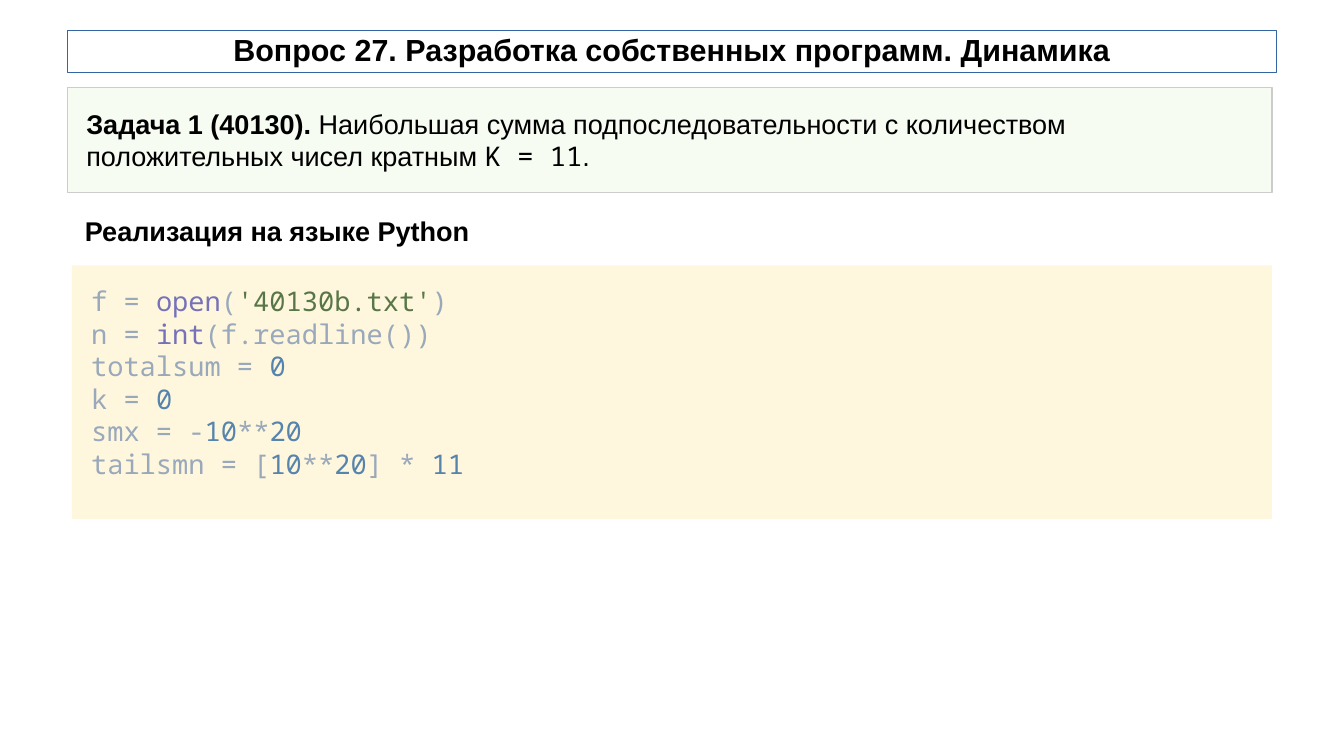
import pptx
import pptx.util
import pptx.dml.color
import pptx.enum.shapes
import pptx.enum.text

Cm = pptx.util.Cm
COLORS = {
    "black": "000000",
    "title_line": "3465A4",
    "task_fill": "F6FCF2",
    "task_line": "CCCCCC",
    "code_fill": "FEF7DD",
    "plain": "99A8BA",
    "builtin": "7572B9",
    "string": "587647",
    "number": "5684AD",
}
SANS, MONO = "Arial", "Noto Sans Mono"
CODE = [
    [("f = ", "plain"), ("open", "builtin"), ("(", "plain"),
     ("'40130b.txt'", "string"), (")", "plain")],
    [("n = ", "plain"), ("int", "builtin"), ("(f.readline())", "plain")],
    [("totalsum = ", "plain"), ("0", "number")],
    [("k = ", "plain"), ("0", "number")],
    [("smx = -", "plain"), ("10", "number"), ("**", "plain"), ("20", "number")],
    [("tailsmn = [", "plain"), ("10", "number"), ("**", "plain"),
     ("20", "number"), ("] * ", "plain"), ("11", "number")],
]


def rgb(name):
    """Return the named colour."""
    return pptx.dml.color.RGBColor.from_string(COLORS[name])


def set_frame(box, inset_x, inset_y, anchor=pptx.enum.text.MSO_ANCHOR.TOP):
    """Set wrapping, margins and anchor of a box and return its text frame."""
    frame = box.text_frame
    frame.word_wrap = True
    frame.margin_left = frame.margin_right = Cm(inset_x)
    frame.margin_top = frame.margin_bottom = Cm(inset_y)
    frame.vertical_anchor = anchor
    return frame


def add_panel(page, left, top, width, height, fill=None, line=None, weight=0):
    """Add a rectangle with an optional fill and outline."""
    panel = page.shapes.add_shape(
        pptx.enum.shapes.MSO_SHAPE.RECTANGLE,
        Cm(left), Cm(top), Cm(width), Cm(height))
    panel.shadow.inherit = False
    if fill:
        panel.fill.solid()
        panel.fill.fore_color.rgb = rgb(fill)
    else:
        panel.fill.background()
    if line:
        panel.line.color.rgb = rgb(line)
        panel.line.width = pptx.util.Pt(weight)
    else:
        panel.line.fill.background()
    return panel


def style_para(para, size, name=None, color=None, bold=None):
    """Set the alignment and the shared font of a paragraph."""
    para.alignment = pptx.enum.text.PP_ALIGN.LEFT
    para.font.size = pptx.util.Pt(size)
    para.font.name = name
    para.font.bold = bold
    if color:
        para.font.color.rgb = rgb(color)


def add_span(para, text):
    """Append a run of text and return it."""
    span = para.add_run()
    span.text = text
    return span


def add_title(page):
    """Add the outlined slide title."""
    box = add_panel(page, 1.4, 0.64, 25.2, 0.86, line="title_line", weight=0.28)
    para = set_frame(box, 0.1, 0, pptx.enum.text.MSO_ANCHOR.MIDDLE).paragraphs[0]
    add_span(para, "Вопрос 27. Разработка собственных программ. Динамика")
    style_para(para, 18, SANS, "black", True)
    para.alignment = pptx.enum.text.PP_ALIGN.CENTER
    para.line_spacing = 0.9


def add_task(page):
    """Add the task statement panel."""
    box = add_panel(page, 1.4, 1.83, 25.1, 2.18, "task_fill", "task_line")
    para = set_frame(box, 0.4, 0.4).paragraphs[0]
    style_para(para, 16, color="black")
    parts = [
        ("Задача 1 (40130).", SANS, True),
        (" Наибольшая сумма подпоследовательности с количеством "
         "положительных чисел кратным ", SANS, False),
        ("K = 11", MONO, False),
        (".", SANS, False),
    ]
    for text, font, bold in parts:
        span = add_span(para, text)
        span.font.name = font
        span.font.bold = bold


def add_heading(page):
    """Add the heading above the code."""
    box = page.shapes.add_textbox(Cm(1.52), Cm(4.34), Cm(9.98), Cm(1.5))
    para = set_frame(box, 0.25, 0.13).paragraphs[0]
    add_span(para, "Реализация на языке Python")
    style_para(para, 16, SANS, "black", True)


def add_code(page):
    """Add the highlighted code panel."""
    box = add_panel(page, 1.5, 5.53, 25, 5.28, "code_fill")
    frame = set_frame(box, 0.4, 0.4)
    for index, line in enumerate(CODE):
        para = frame.add_paragraph() if index else frame.paragraphs[0]
        style_para(para, 16, MONO)
        for text, color in line:
            add_span(para, text).font.color.rgb = rgb(color)


def main():
    """Build the slide and save the deck."""
    deck = pptx.Presentation()
    deck.slide_width, deck.slide_height = Cm(28), Cm(15.75)
    page = deck.slides.add_slide(deck.slide_layouts[6])
    add_code(page)
    add_title(page)
    add_task(page)
    add_heading(page)
    deck.save("out.pptx")


if __name__ == "__main__":
    main()
